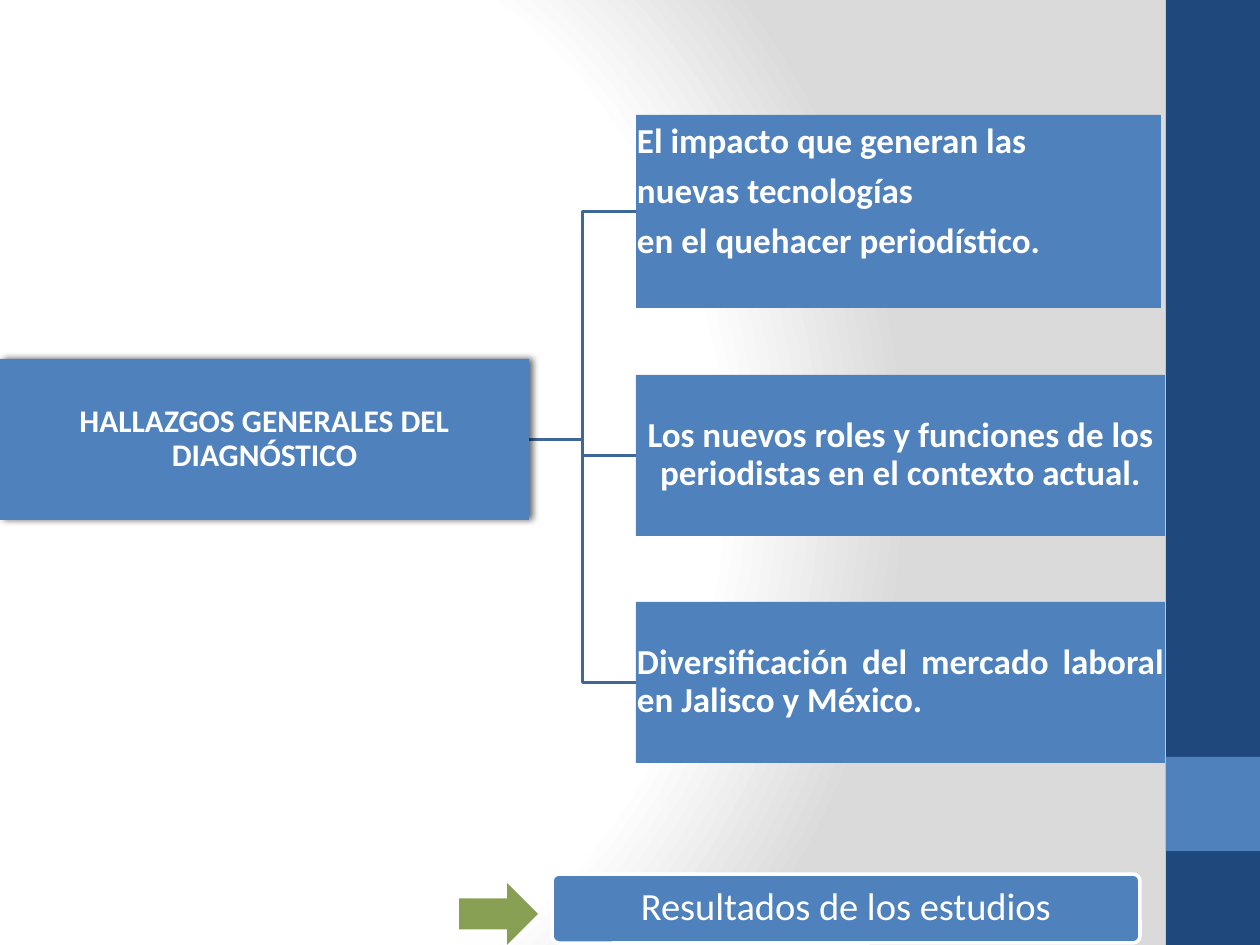
import pptx
import pptx.util
import pptx.dml.color
import pptx.enum.shapes
import pptx.enum.text
import pptx.oxml
import pptx.oxml.ns

PX = 914400 / 126
COLORS = {
    "white": "FFFFFF", "gray": "DADADA", "navy": "1F497D",
    "blue": "4F81BD", "line": "3F6797", "green": "77933C", "black": "000000",
}
SHAPE = pptx.enum.shapes.MSO_SHAPE
ALIGN = pptx.enum.text.PP_ALIGN
NS = pptx.oxml.ns.nsdecls("a", "p")


def emu(px):
    return pptx.util.Emu(round(px * PX))


def rgb(name):
    return pptx.dml.color.RGBColor.from_string(COLORS[name])


def add_box(s, kind, box, fill):
    sp = s.shapes.add_shape(kind, *map(emu, box))
    sp.shadow.inherit = False
    sp.fill.solid()
    sp.fill.fore_color.rgb = rgb(fill)
    sp.line.fill.background()
    return sp


def set_text(sp, text, size, bold=True, align=ALIGN.CENTER, bottom=1):
    tf = sp.text_frame
    tf.word_wrap = True
    tf.vertical_anchor = pptx.enum.text.MSO_ANCHOR.MIDDLE
    tf.margin_left = tf.margin_right = tf.margin_top = emu(1)
    tf.margin_bottom = emu(bottom)
    tf.text = text
    for p in tf.paragraphs:
        p.alignment = align
        p.line_spacing = 0.9
        p.space_after = pptx.util.Pt(round(size * 0.35))
        for r in p.runs:
            r.font.name = "Calibri"
            r.font.size = pptx.util.Pt(size)
            r.font.bold = bold
            r.font.color.rgb = rgb("white")


def add_background(s):
    stops = ((0, "white"), (75000, "white"), (100000, "gray"))
    gs = "".join(
        f'<a:gs pos="{pos}"><a:srgbClr val="{COLORS[name]}"/></a:gs>' for pos, name in stops
    )
    bg = pptx.oxml.parse_xml(
        f'<p:bg {NS}><p:bgPr><a:gradFill rotWithShape="1"><a:gsLst>{gs}</a:gsLst>'
        '<a:path path="circle"><a:fillToRect l="20000" t="50000" r="100000" b="50000"/>'
        "</a:path></a:gradFill><a:effectLst/></p:bgPr></p:bg>"
    )
    s._element.cSld.insert(0, bg)


def add_sidebar(s, x, y, w, h):
    add_box(s, SHAPE.RECTANGLE, (x, y, w, h), "navy")
    add_box(s, SHAPE.RECTANGLE, (x, y + h - 2 * w, w, w), "blue")


def add_branch(s, x1, y1, x2, y2):
    mid = (x1 + x2) / 2
    builder = s.shapes.build_freeform(emu(x1), emu(y1))
    builder.add_line_segments(
        [(emu(mid), emu(y1)), (emu(mid), emu(y2)), (emu(x2), emu(y2))], close=False
    )
    sp = builder.convert_to_shape()
    sp.shadow.inherit = False
    sp.fill.background()
    sp.line.color.rgb = rgb("line")
    sp.line.width = pptx.util.Pt(2)


def add_tree(s, x, y, w, h):
    node_w, node_h = 529, 161
    leaf_x = x + w - node_w
    root_y = y + 244
    findings = [
        ("El impacto que generan las\nnuevas tecnologías\nen el quehacer periodístico.",
         0, 525, 193, ALIGN.JUSTIFY, 40),
        ("Los nuevos roles y funciones de los periodistas en el contexto actual.",
         260, node_w, node_h, ALIGN.CENTER, 1),
        ("Diversificación del mercado laboral en Jalisco y México.",
         h - node_h, node_w, node_h, ALIGN.JUSTIFY, 1),
    ]
    for _, top, _, leaf_h, _, _ in findings:
        add_branch(s, x + node_w, root_y + node_h / 2, leaf_x, y + top + leaf_h / 2)
    root = add_box(s, SHAPE.RECTANGLE, (x, root_y, node_w, node_h), "blue")
    set_text(root, "HALLAZGOS GENERALES DEL DIAGNÓSTICO", 18)
    effects = root._element.spPr.find(pptx.oxml.ns.qn("a:effectLst"))
    effects.append(pptx.oxml.parse_xml(
        f'<a:outerShdw {NS} blurRad="50800" dist="25400" dir="0" rotWithShape="0">'
        f'<a:srgbClr val="{COLORS["black"]}"><a:alpha val="60000"/></a:srgbClr></a:outerShdw>'
    ))
    for text, top, leaf_w, leaf_h, align, bottom in findings:
        leaf = add_box(s, SHAPE.RECTANGLE, (leaf_x, y + top, leaf_w, leaf_h), "blue")
        set_text(leaf, text, 20, align=align, bottom=bottom)


def add_results(s, x, y, w, h):
    card_w = 588
    card = add_box(s, SHAPE.ROUNDED_RECTANGLE, (x + w - card_w, y, card_w, h), "blue")
    card.adjustments[0] = 0.1
    card.line.color.rgb = rgb("white")
    card.line.width = pptx.util.Pt(2)
    set_text(card, "Resultados de los estudios", 22, bold=False)
    arrow = add_box(s, SHAPE.RIGHT_ARROW, (x, y + 9, 79, 62), "green")
    color = arrow._element.spPr.find(".//" + pptx.oxml.ns.qn("a:srgbClr"))
    color.append(pptx.oxml.parse_xml(f'<a:alpha {NS} val="88000"/>'))


def main():
    prs = pptx.Presentation()
    prs.slide_width, prs.slide_height = emu(1260), emu(945)
    s = prs.slides.add_slide(prs.slide_layouts[6])
    add_background(s)
    add_sidebar(s, 1166, 0, 94, 945)
    add_results(s, 459, 874, 681, 69)
    add_tree(s, 0, 115, 1165, 648)
    prs.save("out.pptx")


if __name__ == "__main__":
    main()
